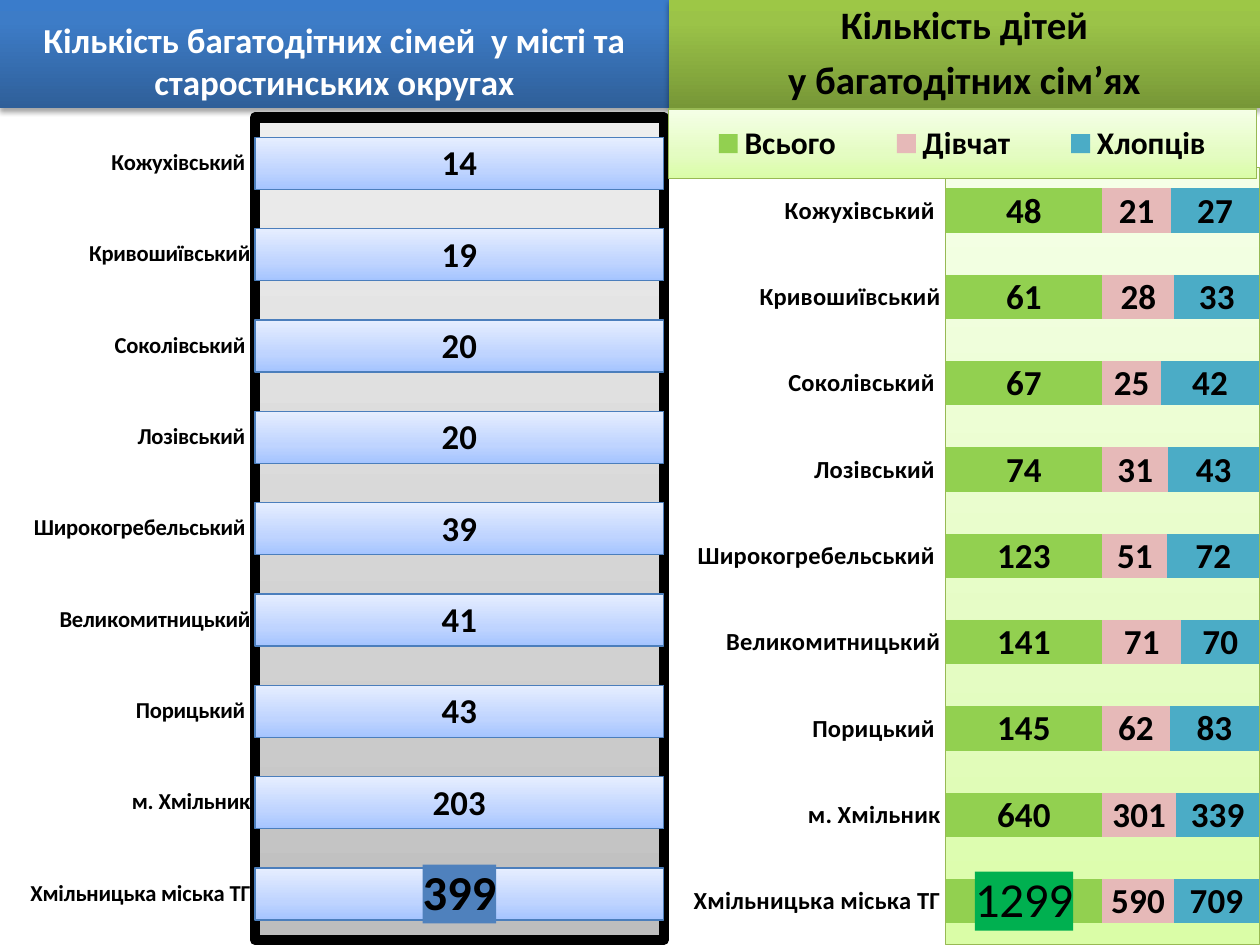
from lxml import etree
from pptx import Presentation
from pptx.chart.data import CategoryChartData
from pptx.dml.color import RGBColor
from pptx.enum import chart as ce, shapes, text
from pptx.oxml import parse_xml
from pptx.oxml.ns import nsdecls, qn
from pptx.util import Inches, Pt

FONT = "Calibri"
COLORS = {"black": "000000", "white": "FFFFFF", "total": "92D050", "girls": "E6B9B8",
          "boys": "4BACC6", "bar_edge": "4B7EBC", "green_edge": "98B954", "axis": "868686",
          "family_mark": "4F81BD", "children_mark": "00B050"}
# Gradient stops run from bottom to top
GRADIENTS = {
    "blue_header": [(0, "2F5F99"), (80, "3D7CC7"), (100, "3A7CCB")],
    "green_header": [(0, "779737"), (80, "9BC348"), (100, "9DC746")],
    "grey_plot": [(0, "BDBDBD"), (35, "D1D1D1"), (100, "EEEEEE")],
    "green_plot": [(0, "DAFDA7"), (35, "E4FCC2"), (100, "F5FFE7")],
    "blue_bar": [(0, "A4C4FF"), (35, "BFD4FF"), (100, "E6EEFF")],
}
DISTRICTS = ["Хмільницька міська ТГ", "м. Хмільник", "Порицький ", "Великомитницький",
             "Широкогребельський ", "Лозівський ", "Соколівський ", "Кривошиївський",
             "Кожухівський "]
HEADERS = [
    dict(lines=["Кількість багатодітних сімей  у місті та старостинських округах"],
         left=0, width=5.31, size=20, color="white", fill="blue_header"),
    dict(lines=["Кількість дітей", "у багатодітних сім’ях"],
         left=5.31, width=4.69, size=22.2, color="black", fill="green_header"),
]
CHARTS = [
    dict(box=(0, 0.78, 5.31, 6.72), layout=(0.384, 0.023, 0.616, 0.976), gap=75, axis_size=13,
         plot_fill="grey_plot", plot_line=("black", 6), mark=("family_mark", True), legend=None,
         series=[("Series 1", "blue_bar", [399, 203, 43, 41, 39, 20, 20, 19, 14])]),
    dict(box=(5.16, 0.86, 4.84, 6.64), layout=(0.485, 0.07, 0.515, 0.93), gap=95, axis_size=14,
         plot_fill="green_plot", plot_line=("green_edge", 0.75), mark=("children_mark", False),
         legend=(0.03, 0, 0.965, 0.083),
         series=[("Всього", "total", [1299, 640, 145, 141, 123, 74, 67, 61, 48]),
                 ("Дівчат", "girls", [590, 301, 62, 71, 51, 31, 25, 28, 21]),
                 ("Хлопців", "boys", [709, 339, 83, 70, 72, 43, 42, 33, 27])]),
]


def rgb(name):
    return RGBColor.from_string(COLORS[name])


def set_font(font, size, color="black", bold=True):
    font.name, font.size, font.bold = FONT, Pt(size), bold
    font.color.rgb = rgb(color)


def fill_xml(name):
    if name in COLORS:
        return f'<a:solidFill {nsdecls("a")}><a:srgbClr val="{COLORS[name]}"/></a:solidFill>'
    stops = "".join(f'<a:gs pos="{pos * 1000}"><a:srgbClr val="{color}"/></a:gs>'
                    for pos, color in GRADIENTS[name])
    return (f'<a:gradFill {nsdecls("a")} rotWithShape="1"><a:gsLst>{stops}</a:gsLst>'
            '<a:lin ang="16200000" scaled="0"/></a:gradFill>')


def set_fill(fill, properties, name):
    fill.solid()
    properties.replace(properties.find(qn("a:solidFill")), parse_xml(fill_xml(name)))


def area_format(fill, line=None):
    edge = ""
    if line:
        edge = f'<a:ln w="{Pt(line[1])}">{fill_xml(line[0])}</a:ln>'
    return parse_xml(f'<c:spPr {nsdecls("c", "a")}>{fill_xml(fill)}{edge}</c:spPr>')


def set_layout(parent, index, box, inner=False):
    for old in parent.findall(qn("c:layout")):
        parent.remove(old)
    layout = etree.Element(qn("c:layout"))
    manual = etree.SubElement(layout, qn("c:manualLayout"))
    values = [("layoutTarget", "inner")] if inner else []
    values += [("xMode", "edge"), ("yMode", "edge"), *zip("xywh", box)]
    for tag, value in values:
        etree.SubElement(manual, qn(f"c:{tag}")).set("val", str(value))
    parent.insert(index, layout)


def add_header(slide, lines, left, width, size, color, fill):
    header = slide.shapes.add_shape(shapes.MSO_SHAPE.RECTANGLE, Inches(left), 0,
                                    Inches(width), Inches(0.86))
    header.line.fill.background()
    properties = header._element.spPr
    set_fill(header.fill, properties, fill)
    properties.append(parse_xml(
        f'<a:effectLst {nsdecls("a")}><a:outerShdw blurRad="{Pt(3.1)}" dist="{Pt(1.8)}" '
        'dir="5400000" rotWithShape="0"><a:srgbClr val="000000"><a:alpha val="35000"/>'
        '</a:srgbClr></a:outerShdw></a:effectLst>'))
    frame = header.text_frame
    frame.word_wrap = True
    frame.vertical_anchor = text.MSO_ANCHOR.BOTTOM
    frame.text = "\n".join(lines)
    for paragraph in frame.paragraphs:
        paragraph.alignment = text.PP_ALIGN.CENTER
        paragraph.space_before = Pt(size * 0.2)
        set_font(paragraph.runs[0].font, size, color)


def add_district_chart(slide, box, layout, gap, axis_size, plot_fill, plot_line, mark,
                       legend, series):
    data = CategoryChartData()
    data.categories = DISTRICTS
    for name, _, values in series:
        data.add_series(name, values)
    chart = slide.shapes.add_chart(ce.XL_CHART_TYPE.BAR_STACKED_100,
                                   *map(Inches, box), data).chart
    chart.has_title = False
    set_font(chart.font, 18, bold=False)

    # Axes
    districts, shares = chart.category_axis, chart.value_axis
    districts.major_tick_mark = districts.minor_tick_mark = ce.XL_TICK_MARK.NONE
    districts.has_major_gridlines = shares.has_major_gridlines = False
    districts.format.line.color.rgb = rgb(plot_line[0])
    set_font(districts.tick_labels.font, axis_size)
    shares.visible = False

    # Plot area
    plot = chart.plots[0]
    plot.gap_width, plot.overlap, plot.vary_by_categories = gap, 100, False
    area = chart._chartSpace.chart.plotArea
    set_layout(area, 0, layout, inner=True)
    area.append(area_format(plot_fill, plot_line))

    # Bars and value labels
    for bars, (_, fill, _) in zip(plot.series, series):
        set_fill(bars.format.fill, bars._element.spPr, fill)
        if fill in GRADIENTS:
            bars.format.line.color.rgb = rgb("bar_edge")
            bars.format.line.width = Pt(0.75)
        bars.data_labels.show_value = True
        set_font(bars.data_labels.font, 20)

    # Highlighted overall count
    mark_fill, mark_bold = mark
    set_font(plot.series[0].points[0].data_label.font, 28, bold=mark_bold)
    label = plot.series[0]._element.find(f'{qn("c:dLbls")}/{qn("c:dLbl")}')
    label.find(qn("c:txPr")).addprevious(area_format(mark_fill))

    # Legend
    chart.has_legend = legend is not None
    if legend:
        chart.legend.position = ce.XL_LEGEND_POSITION.TOP
        chart.legend.include_in_layout = False
        set_font(chart.legend.font, 18)
        key = chart.legend._element
        set_layout(key, 1, legend)
        key.find(qn("c:txPr")).addprevious(area_format(plot_fill, plot_line))


def main():
    deck = Presentation()
    deck.slide_width, deck.slide_height = Inches(10), Inches(7.5)
    slide = deck.slides.add_slide(deck.slide_layouts[6])
    for header, chart in zip(HEADERS, CHARTS):
        add_header(slide, **header)
        add_district_chart(slide, **chart)
    deck.save("out.pptx")


if __name__ == "__main__":
    main()
